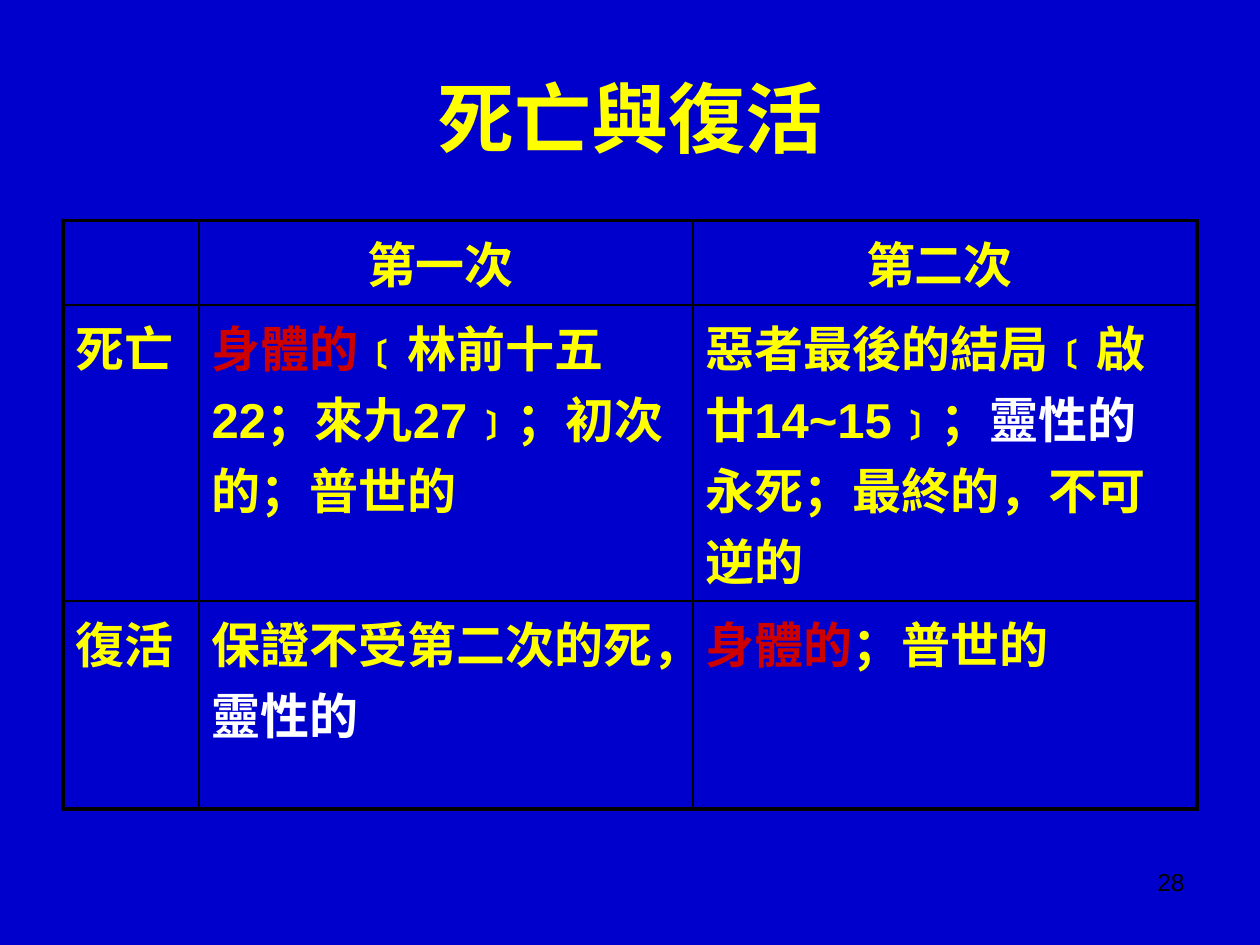
from dataclasses import dataclass

import pptx
import pptx.dml.color
import pptx.enum.text
import pptx.oxml
import pptx.oxml.ns
import pptx.util
from pptx.util import Inches

COLORS = {
    "background": "0000CC",
    "main": "FFFF00",
    "bodily": "CC0000",
    "spiritual": "FFFFFF",
    "line": "000000",
}
FONT = "Arial"
ALIGN = pptx.enum.text.PP_ALIGN
ANCHOR = pptx.enum.text.MSO_ANCHOR
OUTER_LINE = 2.25
INNER_LINE = 1
COLUMN_WIDTHS = [1.08, 3.92, 4]
ROW_HEIGHTS = [0.67, 2.35, 1.65]


@dataclass(frozen=True)
class Segment:
    text: str
    color: str = "main"


@dataclass(frozen=True)
class TextBox:
    segment: Segment
    left: float
    top: float
    width: float
    height: float
    size: float
    bold: bool
    align: ALIGN
    anchor: ANCHOR


TITLE = TextBox(Segment("死亡與復活"), 0.5, 0.3, 9, 1.25, 44, True, ALIGN.CENTER, ANCHOR.MIDDLE)
PAGE_NUMBER = TextBox(Segment("28", "line"), 7.17, 6.83, 2.33, 0.52, 14, False, ALIGN.RIGHT, ANCHOR.TOP)

ROWS = [
    [[], [Segment("第一次 ")], [Segment("第二次 ")]],
    [
        [Segment("死亡")],
        [Segment("身體的", "bodily"), Segment("﹝林前十五22；來九27﹞；初次的；普世的")],
        [
            Segment("惡者最後的結局﹝啟廿14~15﹞；"),
            Segment("靈性的", "spiritual"),
            Segment("永死；最終的，不可逆的"),
        ],
    ],
    [
        [Segment("復活")],
        [Segment("保證不受第二次的死，"), Segment("靈性的", "spiritual")],
        [Segment("身體的", "bodily"), Segment("；普世的")],
    ],
]


def add_run(paragraph, segment: Segment, size: float, bold: bool) -> None:
    run = paragraph.add_run()
    run.text = segment.text
    run.font.name = FONT
    run.font.size = pptx.util.Pt(size)
    run.font.bold = bold
    run.font.color.rgb = pptx.dml.color.RGBColor.from_string(COLORS[segment.color])


def add_text_box(slide, box: TextBox) -> None:
    shape = slide.shapes.add_textbox(
        Inches(box.left), Inches(box.top), Inches(box.width), Inches(box.height)
    )
    frame = shape.text_frame
    frame.word_wrap = True
    frame.vertical_anchor = box.anchor
    paragraph = frame.paragraphs[0]
    paragraph.alignment = box.align
    add_run(paragraph, box.segment, box.size, box.bold)


def set_borders(cell, row: int, column: int) -> None:
    outer_sides = {
        "L": column == 0,
        "R": column == len(COLUMN_WIDTHS) - 1,
        "T": row == 0,
        "B": row == len(ROW_HEIGHTS) - 1,
    }
    properties = cell._tc.get_or_add_tcPr()
    for index, (side, is_outer) in enumerate(outer_sides.items()):
        width = pptx.util.Pt(OUTER_LINE if is_outer else INNER_LINE)
        border = pptx.oxml.parse_xml(
            f'<a:ln{side} {pptx.oxml.ns.nsdecls("a")} w="{int(width)}">'
            f'<a:solidFill><a:srgbClr val="{COLORS["line"]}"/></a:solidFill>'
            f"</a:ln{side}>"
        )
        properties.insert(index, border)


def add_comparison_table(slide) -> None:
    shape = slide.shapes.add_table(
        len(ROW_HEIGHTS),
        len(COLUMN_WIDTHS),
        Inches(0.5),
        Inches(1.75),
        Inches(sum(COLUMN_WIDTHS)),
        Inches(sum(ROW_HEIGHTS)),
    )
    table = shape.table
    table.first_row = False
    table.horz_banding = False
    for column, width in zip(table.columns, COLUMN_WIDTHS):
        column.width = Inches(width)
    for row, height in zip(table.rows, ROW_HEIGHTS):
        row.height = Inches(height)
    for row_index, row in enumerate(ROWS):
        for column_index, segments in enumerate(row):
            cell = table.cell(row_index, column_index)
            cell.fill.background()
            set_borders(cell, row_index, column_index)
            paragraph = cell.text_frame.paragraphs[0]
            paragraph.alignment = ALIGN.CENTER if row_index == 0 else ALIGN.LEFT
            paragraph.space_before = pptx.util.Pt(5.6)
            for segment in segments:
                add_run(paragraph, segment, 28, True)


def main() -> None:
    presentation = pptx.Presentation()
    presentation.slide_width = Inches(10)
    presentation.slide_height = Inches(7.5)
    slide = presentation.slides.add_slide(presentation.slide_layouts[6])
    fill = slide.background.fill
    fill.solid()
    fill.fore_color.rgb = pptx.dml.color.RGBColor.from_string(COLORS["background"])
    add_text_box(slide, TITLE)
    add_comparison_table(slide)
    add_text_box(slide, PAGE_NUMBER)
    presentation.save("out.pptx")


if __name__ == "__main__":
    main()
